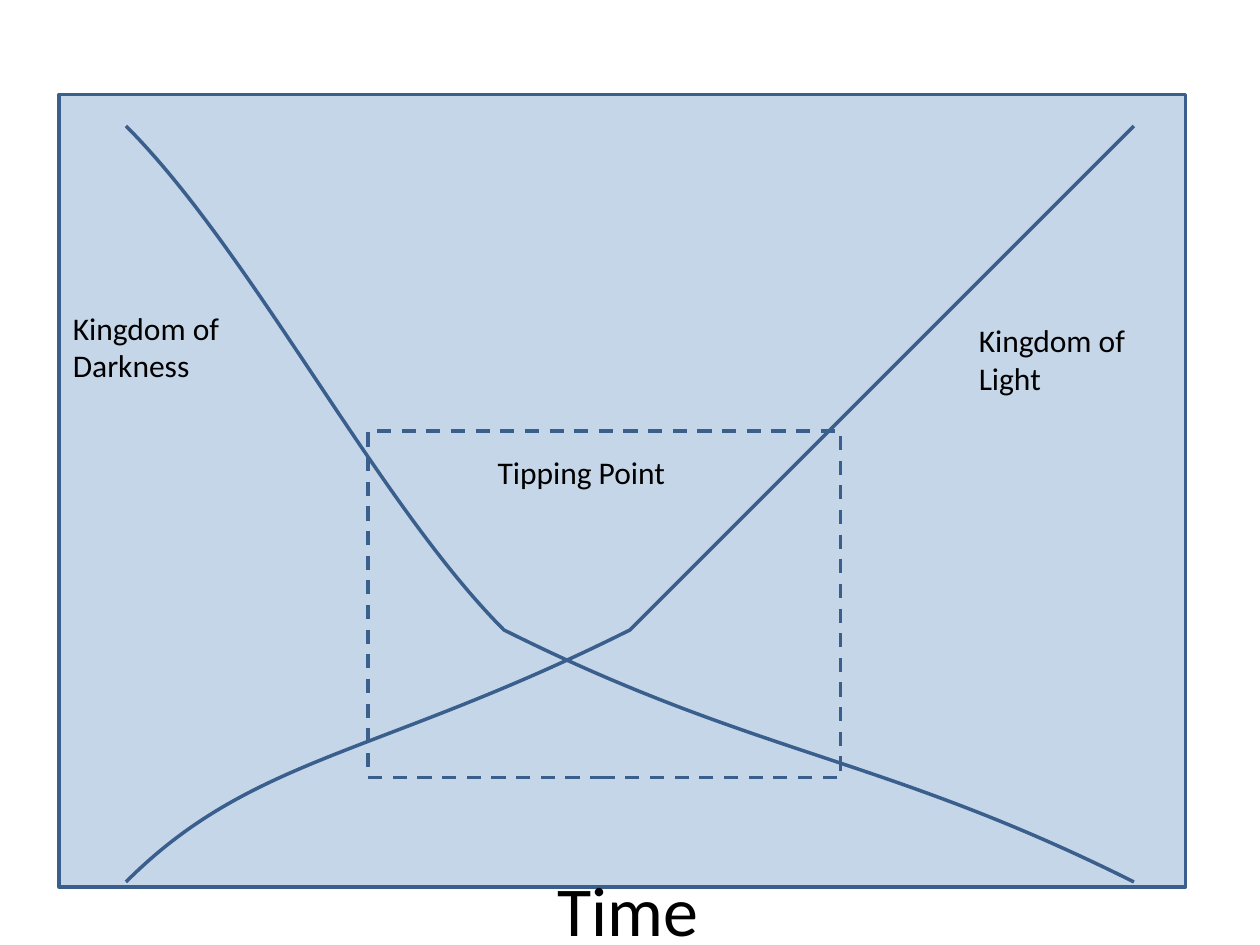
from lxml import etree
from pptx import Presentation
from pptx.dml.color import RGBColor
from pptx.enum.dml import MSO_LINE
from pptx.enum.shapes import MSO_SHAPE
from pptx.oxml.ns import qn
from pptx.util import Inches, Pt

RECTANGLE = MSO_SHAPE.RECTANGLE
DASH = MSO_LINE.DASH
BLANK_LAYOUT = 6

PANEL_FILL, LINE_COLOUR, TEXT_COLOUR = "4F81BD", "3A5F8C", "000000"
PANEL_OPACITY = 32  # percent
FONT = "Calibri"

# left, top, width, height in inches
PANEL = (0.47, 0.75, 8.94, 6.29)
TIPPING_ZONE = (2.92, 3.42, 3.75, 2.75)

# Start point, then two control points and an end point for each Bézier segment
DARKNESS_CURVE = [
    (0.83, 0.94),
    (1.91, 2.3), (2.99, 3.66), (4.33, 4.63),
    (5.67, 5.6), (7.28, 6.18), (8.89, 6.76),
]
LIGHT_CURVE = [
    (0.65, 6.87),
    (2, 6.45), (3.35, 6.04), (4.7, 5.07),
    (6.04, 4.11), (8.73, 1.09), (8.73, 1.09),
]

LABELS = [
    ("Kingdom of Darkness", 18, (0.48, 2.4, 1.77, 1.01)),
    ("Kingdom of Light", 18, (7.67, 2.5, 1.66, 1.01)),
    ("Time", 40, (4.33, 6.83, 3.33, 1.08)),
    ("Tipping Point", 18, (3.85, 3.55, 1.89, 0.4)),
]


def rgb(colour):
    return RGBColor.from_string(colour)


def outline(shape):
    shape.shadow.inherit = False
    shape.line.color.rgb = rgb(LINE_COLOUR)
    shape.line.width = Pt(2)


def add_box(slide, box):
    shape = slide.shapes.add_shape(RECTANGLE, *map(Inches, box))
    outline(shape)
    return shape


def add_curve(slide, points):
    """Draw a freeform through the points, then turn each three lines into a Bézier."""
    builder = slide.shapes.build_freeform(*points[0], scale=Inches(1) / 1.0)
    builder.add_line_segments(points[1:], close=False)
    curve = builder.convert_to_shape()
    outline(curve)
    curve.fill.background()

    lines = list(curve.element.iter(qn("a:lnTo")))
    for first in range(0, len(lines), 3):
        segment = etree.Element(qn("a:cubicBezTo"))
        lines[first].addprevious(segment)
        for line in lines[first:first + 3]:
            segment.append(line[0])
            line.getparent().remove(line)


def add_label(slide, text, size, box):
    frame = slide.shapes.add_textbox(*map(Inches, box)).text_frame
    frame.word_wrap = True
    paragraph = frame.paragraphs[0]
    paragraph.text = text
    paragraph.font.name = FONT
    paragraph.font.size = Pt(size)
    paragraph.font.color.rgb = rgb(TEXT_COLOUR)


def main():
    prs = Presentation()
    prs.slide_width, prs.slide_height = Inches(10), Inches(7.5)
    slide = prs.slides.add_slide(prs.slide_layouts[BLANK_LAYOUT])

    panel = add_box(slide, PANEL)
    panel.fill.solid()
    panel.fill.fore_color.rgb = rgb(PANEL_FILL)
    fill_colour = panel.element.spPr.find(qn("a:solidFill"))[0]
    etree.SubElement(fill_colour, qn("a:alpha"), val=str(PANEL_OPACITY * 1000))

    add_curve(slide, DARKNESS_CURVE)
    zone = add_box(slide, TIPPING_ZONE)
    zone.fill.background()
    zone.line.dash_style = DASH
    add_curve(slide, LIGHT_CURVE)

    for label in LABELS:
        add_label(slide, *label)

    prs.save("out.pptx")


if __name__ == "__main__":
    main()
